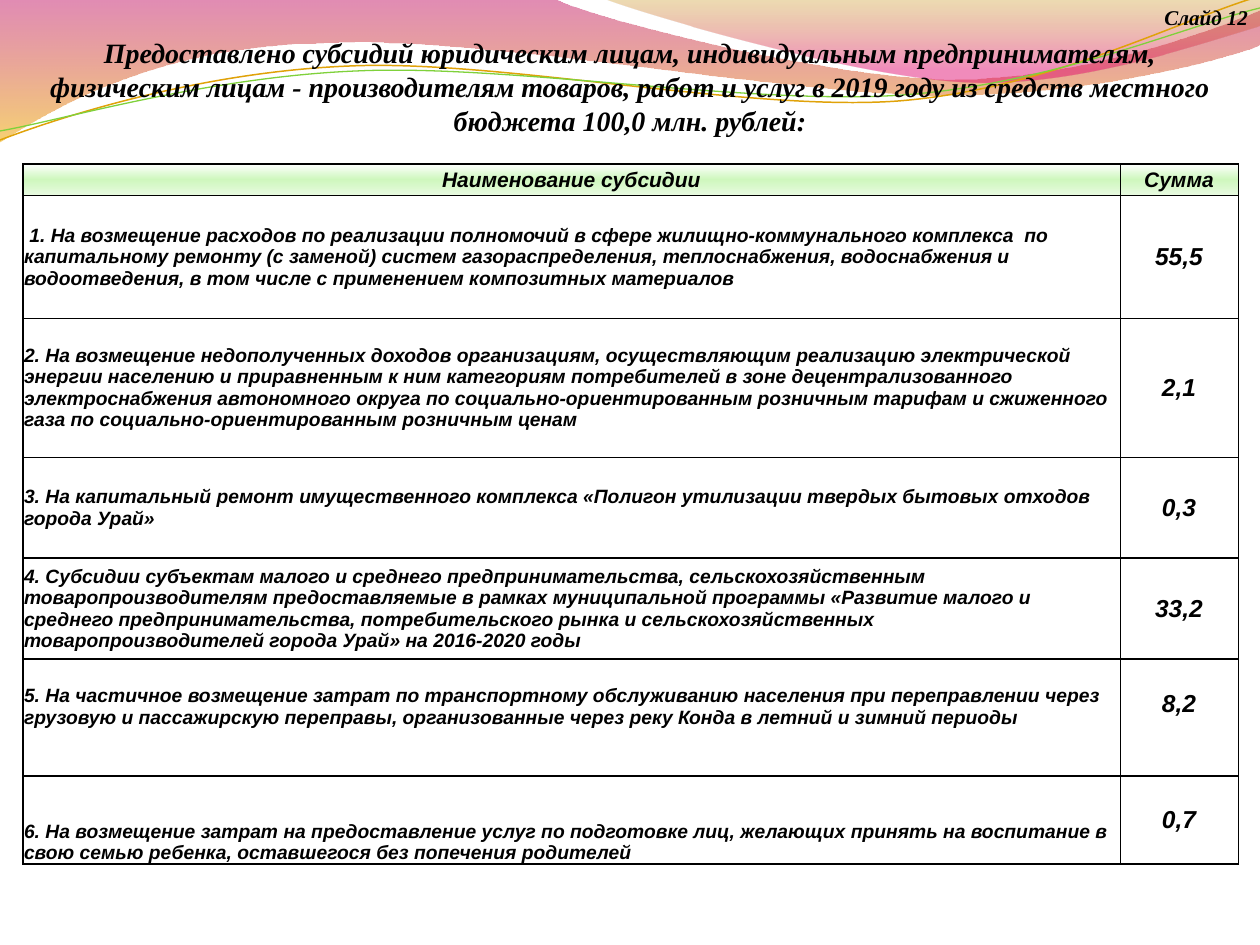
from lxml.etree import SubElement
from pptx import Presentation
from pptx.dml.color import RGBColor
from pptx.enum.text import MSO_ANCHOR, PP_ALIGN
from pptx.oxml.ns import qn
from pptx.util import Emu, Pt

SCALE = 914400 / 126
BANDS = [
    ([(0, 0), (554, -1), (600, 21, 837, 79, 955, 79), (1075, 79, 1207, 33, 1260, 11),
      (1261, 45), (1239, 55, 1096, 96, 940, 95), (784, 95, 481, 35, 324, 43),
      (163, 45, 58, 105, -1, 142)],
     [(0, "BD0059", 45), (100, "F0AB00", 55)]),
    ([(604, -1), (641, 14, 859, 78, 969, 82), (1079, 87, 1211, 40, 1260, 26), (1260, 0)],
     [(0, "C38B00", 30), (80, "E1006B", 45)]),
]
WAVES = [
    ([(0, 140), (60, 117, 199, 72, 349, 66), (498, 59, 747, 112, 898, 101),
      (1050, 89, 1182, 19, 1257, -3)], "E0A209", 0.85),
    ([(0, 131), (59, 121, 207, 77, 357, 71), (508, 64, 752, 106, 903, 95),
      (1053, 84, 1186, 26, 1260, 8)], "7FD13B", 0.75),
]
HEADER_STOPS = [(0, "FFFFFF", 100), (50, "CEF7BD", 100), (100, "E7FADF", 100)]
TITLE = ("Предоставлено субсидий юридическим лицам, индивидуальным предпринимателям, "
         "физическим лицам - производителям товаров, работ и услуг в 2019 году "
         "из средств местного бюджета 100,0 млн. рублей:")
ROWS = [
    ("Наименование субсидии", "Сумма"),
    (" 1. На возмещение расходов по реализации полномочий в сфере жилищно-коммунального "
     "комплекса  по капитальному ремонту (с заменой) систем газораспределения, "
     "теплоснабжения, водоснабжения и водоотведения, в том числе с применением "
     "композитных материалов", "55,5"),
    ("2. На возмещение недополученных доходов организациям, осуществляющим реализацию "
     "электрической энергии населению и приравненным к ним категориям потребителей в зоне "
     "децентрализованного электроснабжения автономного округа по социально-ориентированным "
     "розничным тарифам и сжиженного газа по социально-ориентированным розничным ценам", "2,1"),
    ("3. На капитальный ремонт имущественного комплекса «Полигон утилизации твердых "
     "бытовых отходов города Урай»", "0,3"),
    ("4. Субсидии субъектам малого и среднего предпринимательства, сельскохозяйственным "
     "товаропроизводителям предоставляемые в рамках муниципальной программы «Развитие малого "
     "и среднего предпринимательства, потребительского рынка и сельскохозяйственных "
     "товаропроизводителей города Урай» на 2016-2020 годы", "33,2"),
    ("5. На частичное возмещение затрат по транспортному обслуживанию населения при "
     "переправлении через грузовую и пассажирскую переправы, организованные через реку Конда "
     "в летний и зимний периоды", "8,2"),
    ("6. На возмещение затрат на предоставление услуг по подготовке лиц, желающих принять "
     "на воспитание в свою семью ребенка, оставшегося без попечения родителей", "0,7"),
]
ROW_HEIGHTS = [31, 123, 139, 101, 101, 117, 88]
COLUMN_WIDTHS = [1097, 118]
BOTTOM_INSETS = {(5, 0): 22, (5, 1): 28}
THICK_EDGES = {0, 4, 5, 6, 7}


def px(length):
    return Emu(round(length * SCALE))


def color(value):
    return RGBColor.from_string(value)


def add_gradient(parent, stops):
    gradient = SubElement(parent, qn("a:gradFill"), rotWithShape="1")
    stop_list = SubElement(gradient, qn("a:gsLst"))
    for position, value, opacity in stops:
        stop = SubElement(stop_list, qn("a:gs"), pos=str(position * 1000))
        tint = SubElement(stop, qn("a:srgbClr"), val=value)
        if opacity < 100:
            SubElement(tint, qn("a:alpha"), val=str(opacity * 1000))
    SubElement(gradient, qn("a:lin"), ang="5400000", scaled="0")


def bend(shape, segments):
    lines = list(shape.element.spPr.iter(qn("a:lnTo")))
    for segment in segments[1:]:
        count = len(segment) // 2
        group, lines = lines[:count], lines[count:]
        if count == 3:
            outline = group[0].getparent()
            curve = SubElement(outline, qn("a:cubicBezTo"))
            outline.replace(group[0], curve)
            for line in group:
                curve.append(line[0])
            for line in group[1:]:
                outline.remove(line)


def add_outline(page, segments, close):
    points = [pair for segment in segments for pair in zip(segment[::2], segment[1::2])]
    builder = page.shapes.build_freeform(*points[0], scale=SCALE)
    builder.add_line_segments(points[1:], close=close)
    shape = builder.convert_to_shape()
    bend(shape, segments)
    shape.shadow.inherit = False
    shape.fill.background()
    return shape


def add_band(page, segments, stops):
    shape = add_outline(page, segments, True)
    shape.line.fill.background()
    properties = shape.element.spPr
    empty = properties.find(qn("a:noFill"))
    add_gradient(properties, stops)
    properties.replace(empty, properties[-1])


def add_wave(page, segments, value, width):
    shape = add_outline(page, segments, False)
    shape.line.color.rgb = color(value)
    shape.line.width = Pt(width)


def write(frame, text, size, font="Arial", align=PP_ALIGN.LEFT):
    para = frame.paragraphs[0]
    para.alignment = align
    span = para.add_run()
    span.text = text
    span.font.size = Pt(size)
    span.font.name = font
    span.font.bold = span.font.italic = True
    span.font.color.rgb = color("000000")


def add_text(page, left, top, width, height, text, size, wrap=True, inset_top=6,
             align=PP_ALIGN.LEFT):
    box = page.shapes.add_textbox(px(left), px(top), px(width), px(height))
    frame = box.text_frame
    frame.word_wrap = wrap
    frame.margin_top = px(inset_top)
    write(frame, text, size, font="Times New Roman", align=align)


def add_borders(cell, widths):
    properties = cell._tc.get_or_add_tcPr()
    for side, width in zip("LRTB", widths):
        edge = SubElement(properties, qn(f"a:ln{side}"), w=str(Pt(width)))
        fill = SubElement(edge, qn("a:solidFill"))
        SubElement(fill, qn("a:srgbClr"), val="000000")


def format_cell(cell, text, row, column):
    cell.margin_left = cell.margin_right = cell.margin_top = px(1)
    cell.margin_bottom = px(BOTTOM_INSETS.get((row, column), 0))
    last_name = (row, column) == (len(ROWS) - 1, 0)
    cell.vertical_anchor = MSO_ANCHOR.BOTTOM if last_name else MSO_ANCHOR.MIDDLE
    size = 12 if row == 0 else (11, 14)[column]
    centred = row == 0 or column == 1
    write(cell.text_frame, text, size, align=PP_ALIGN.CENTER if centred else PP_ALIGN.LEFT)
    top, bottom = (1 if edge in THICK_EDGES else 0.5 for edge in (row, row + 1))
    add_borders(cell, (1 if column == 0 else 0.5, 0.5, top, bottom))
    if row == 0:
        add_gradient(cell._tc.tcPr, HEADER_STOPS)
    else:
        cell.fill.background()


def add_subsidy_table(page):
    frame = page.shapes.add_table(len(ROWS), 2, px(23), px(164),
                                  px(sum(COLUMN_WIDTHS)), px(sum(ROW_HEIGHTS)))
    table = frame.table
    table.first_row = table.horz_banding = False
    for column, width in zip(table.columns, COLUMN_WIDTHS):
        column.width = px(width)
    for row, (texts, height) in enumerate(zip(ROWS, ROW_HEIGHTS)):
        table.rows[row].height = px(height)
        for column, text in enumerate(texts):
            format_cell(table.cell(row, column), text, row, column)


def main():
    deck = Presentation()
    deck.slide_width, deck.slide_height = px(1260), px(945)
    page = deck.slides.add_slide(deck.slide_layouts[6])
    for segments, stops in BANDS:
        add_band(page, segments, stops)
    for segments, value, width in WAVES:
        add_wave(page, segments, value, width)
    add_text(page, 15, 0, 1230, 326, TITLE, 16, inset_top=36, align=PP_ALIGN.CENTER)
    add_subsidy_table(page)
    add_text(page, 1152, -1, 109, 38, "Слайд 12", 12, wrap=False)
    deck.save("out.pptx")


if __name__ == "__main__":
    main()
